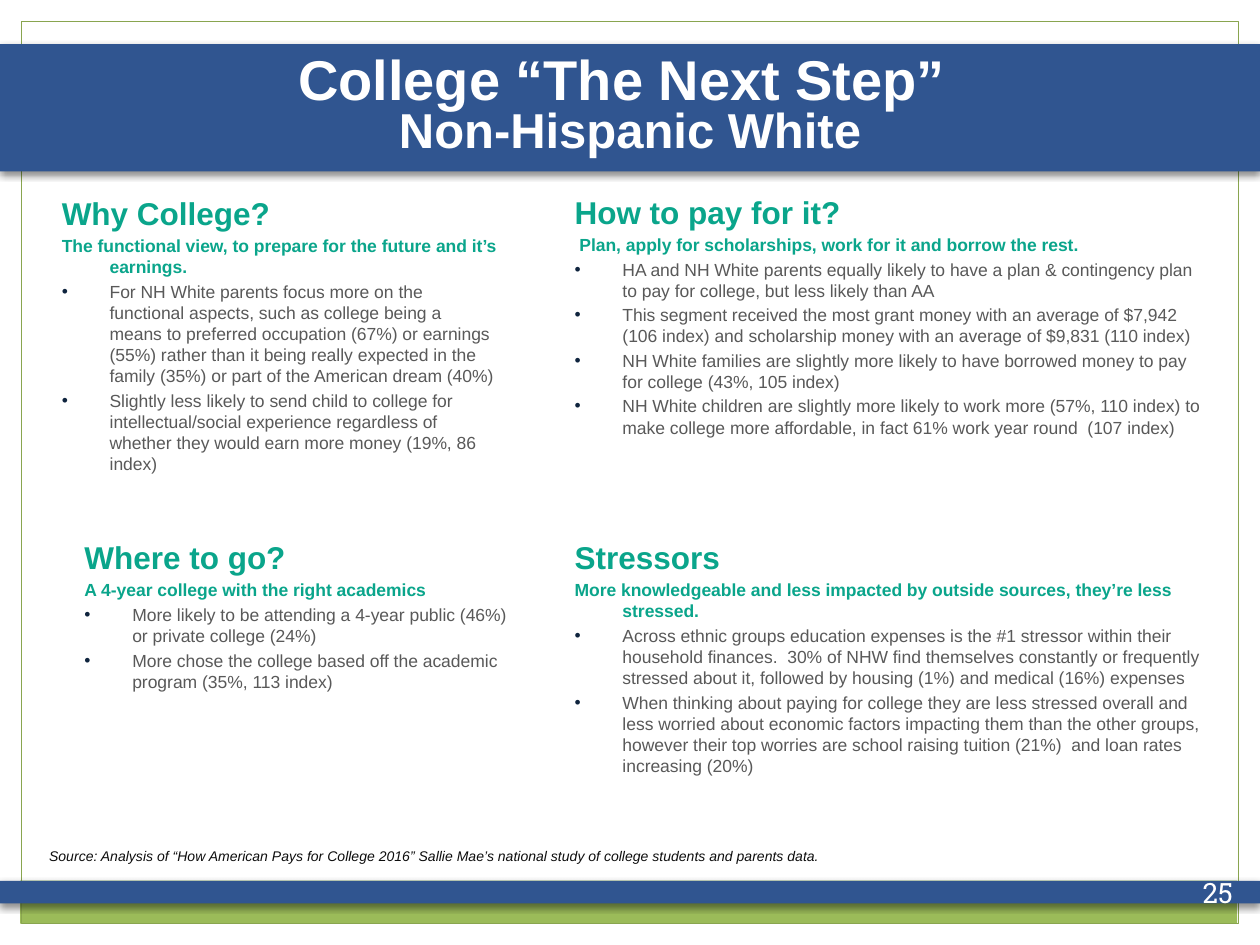
from lxml.etree import SubElement as add_child
from pptx import Presentation
from pptx.dml.color import RGBColor
from pptx.enum.shapes import MSO_SHAPE as Preset
from pptx.enum.text import MSO_ANCHOR as Anchor, MSO_AUTO_SIZE as AutoSize, PP_ALIGN as Align
from pptx.oxml import parse_xml
from pptx.oxml.ns import nsdecls, qn
from pptx.util import Inches, Pt

BLUE, GREEN, TEAL = "305590", "9BBB59", "0AA58B"
GRAY, NAVY, WHITE = "595959", "0F243E", "FFFFFF"
HANG = Inches(0.38)

SECTIONS = [
    ((0.42, 1.5, 3.6, 2.33), "Why College?",
     "The functional view, to prepare for the future and it’s earnings.",
     ["For NH White parents focus more on the functional aspects, such as college being a means to preferred occupation (67%) or earnings (55%) rather than it being really expected in the family (35%) or part of the American dream (40%)",
      "Slightly less likely to send child to college for intellectual/social experience regardless of whether they would earn more money (19%, 86 index)"]),
    ((4.49, 1.49, 5.1, 2.18), "How to pay for it?",
     " Plan, apply for scholarships, work for it and borrow the rest.",
     ["HA and NH White parents equally likely to have a plan & contingency plan to pay for college, but less likely than AA",
      "This segment received the most grant money with an average of $7,942 (106 index) and scholarship money with an average of $9,831 (110 index)",
      "NH White families are slightly more likely to have borrowed money to pay for college (43%, 105 index)",
      "NH White children are slightly more likely to work more (57%, 110 index) to make college more affordable, in fact 61% work year round  (107 index)"]),
    ((0.6, 4.23, 3.6, 1.35), "Where to go?",
     "A 4-year college with the right academics",
     ["More likely to be attending a 4-year public (46%) or private college (24%)",
      "More chose the college based off the academic program (35%, 113 index)"]),
    ((4.49, 4.23, 5.1, 2.11), "Stressors",
     "More knowledgeable and less impacted by outside sources, they’re less stressed.",
     ["Across ethnic groups education expenses is the #1 stressor within their household finances.  30% of NHW find themselves constantly or frequently stressed about it, followed by housing (1%) and medical (16%) expenses",
      "When thinking about paying for college they are less stressed overall and less worried about economic factors impacting them than the other groups, however their top worries are school raising tuition (21%)  and loan rates increasing (20%)"]),
]


def color(value):
    return RGBColor.from_string(value)


def fill_shape(shape, value):
    shape.fill.solid()
    shape.fill.fore_color.rgb = color(value)


def place(shape, at):
    shape.left, shape.top, shape.width, shape.height = map(Inches, at)


def bring_to_front(shape):
    shape.element.getparent().append(shape.element)


def add_shadow(shape):
    shape.element.spPr.append(parse_xml(
        f'<a:effectLst {nsdecls("a")}><a:outerShdw blurRad="{Pt(4)}" dist="{Pt(2)}" '
        'dir="5400000" rotWithShape="0"><a:srgbClr val="000000">'
        '<a:alpha val="45000"/></a:srgbClr></a:outerShdw></a:effectLst>'))


def add_rectangle(page, at, fill=None, line=None):
    box = page.shapes.add_shape(Preset.RECTANGLE, *map(Inches, at))
    if fill:
        fill_shape(box, fill)
    else:
        box.fill.background()
    if line:
        box.line.color.rgb = color(line)
        box.line.width = Pt(0.75)
    else:
        box.line.fill.background()
    return box


def set_frame(box, inset_x, inset_y, anchor=Anchor.TOP):
    frame = box.text_frame
    frame.word_wrap = True
    frame.auto_size = AutoSize.NONE
    frame.vertical_anchor = anchor
    frame.margin_left = frame.margin_right = Inches(inset_x)
    frame.margin_top = frame.margin_bottom = Inches(inset_y)
    return frame


def format_para(para, size, value, bold=False, italic=False, font="Arial", align=Align.LEFT):
    para.alignment = align
    para.space_before = Pt(0)
    for span in para.runs:
        span.font.name = font
        span.font.size = Pt(size)
        span.font.bold = bold
        span.font.italic = italic
        span.font.color.rgb = color(value)


def hang_para(para, bullet):
    props = para._p.get_or_add_pPr()
    props.set("marL", str(HANG))
    props.set("indent", str(-HANG))
    if bullet:
        add_child(add_child(props, qn("a:buClr")), qn("a:srgbClr"), val=NAVY)
        add_child(props, qn("a:buFont"), typeface="Arial")
        add_child(props, qn("a:buChar"), char="•")
    else:
        add_child(props, qn("a:buNone"))


def fill_title(title):
    place(title, (0, 0.35, 10, 1.01))
    fill_shape(title, BLUE)
    add_shadow(title)
    frame = set_frame(title, 0.1, 0.05, Anchor.MIDDLE)
    frame.text = "College “The Next Step” \nNon-Hispanic White"
    for para, size in zip(frame.paragraphs, (32, 28)):
        format_para(para, size, WHITE, bold=True, align=Align.CENTER)
        para.line_spacing = 0.8


def fill_section(body, at, heading, summary, points):
    place(body, at)
    frame = set_frame(body, 0.07, 0.04)
    frame.text = "\n".join([heading, summary, *points])
    for index, para in enumerate(frame.paragraphs):
        is_point = index > 1
        hang_para(para, is_point)
        format_para(para, 10 if index else 18, GRAY if is_point else TEAL, bold=not is_point)
        if index:
            para.space_before = Pt(2)
    bring_to_front(body)


def add_label(page, at, text, insets, anchor=Anchor.TOP, **style):
    box = page.shapes.add_textbox(*map(Inches, at))
    frame = set_frame(box, *insets, anchor)
    frame.text = text
    format_para(frame.paragraphs[0], **style)


def main():
    deck = Presentation()
    deck.slide_width, deck.slide_height = Inches(10), Inches(7.5)
    page = deck.slides.add_slide(deck.slide_layouts.get_by_name("Comparison"))
    title, *bodies = list(page.placeholders)

    add_rectangle(page, (0.16, 6.99, 9.66, 0.34), fill=GREEN).shadow.inherit = False
    add_rectangle(page, (0.17, 0.17, 9.66, 7.16), line="89A54F").shadow.inherit = False
    add_shadow(add_rectangle(page, (0, 6.99, 10, 0.18), fill=BLUE))

    fill_title(title)
    bring_to_front(title)
    for body, section in zip(bodies, SECTIONS):
        fill_section(body, *section)

    add_label(page, (0.32, 6.69, 8.43, 0.3),
              "Source: Analysis of “How American Pays for College 2016” Sallie Mae’s national study of college students and parents data.",
              (0.07, 0.04), size=8, value="0D0D0D", italic=True)
    add_label(page, (9.33, 6.84, 0.67, 0.48), "25", (0.05, 0.05), Anchor.MIDDLE,
              size=16, value=WHITE, font="Roboto Slab", align=Align.CENTER)
    deck.save("out.pptx")


if __name__ == "__main__":
    main()
